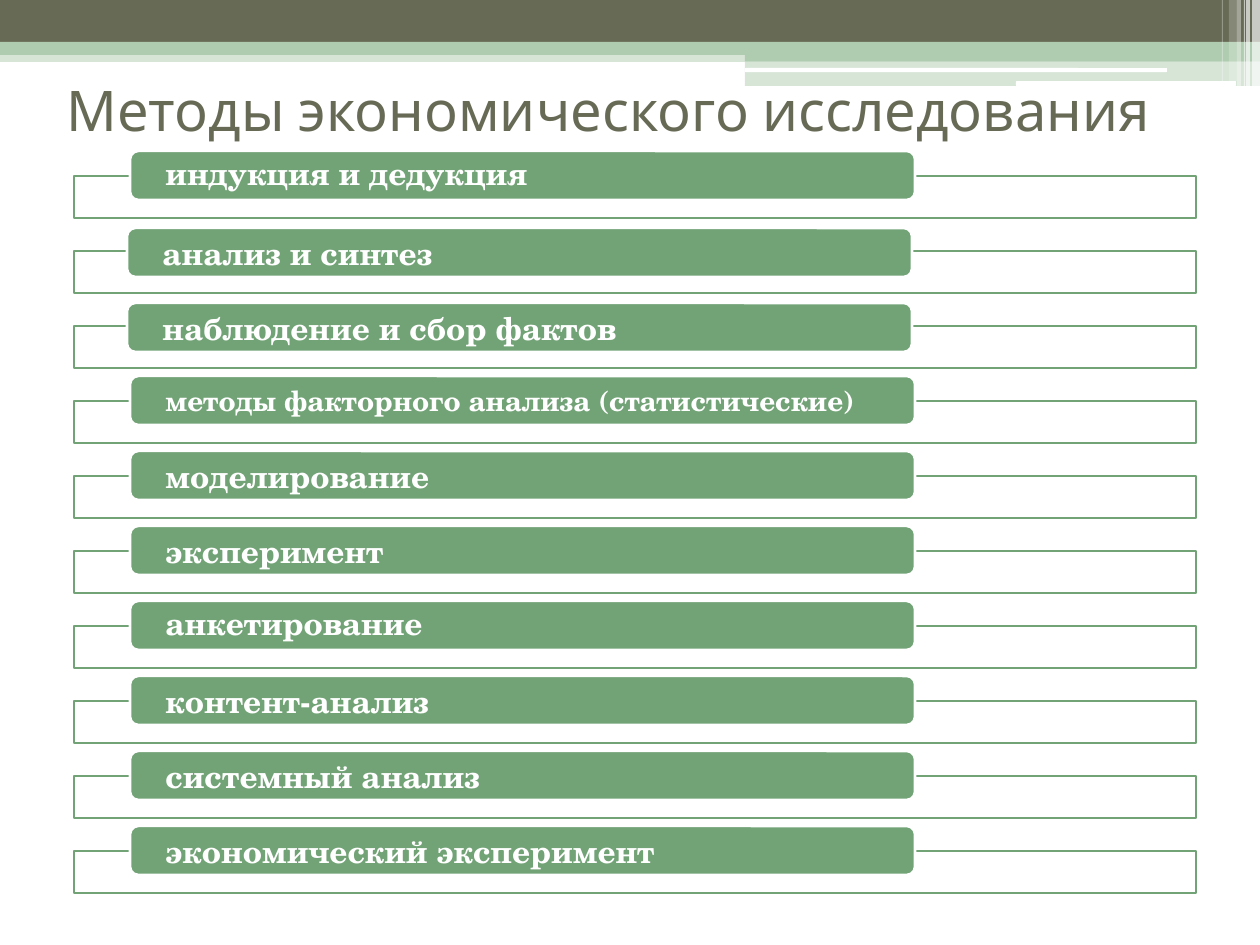
from dataclasses import dataclass
from typing import Optional

from lxml import etree
from pptx import Presentation
from pptx.dml.color import RGBColor
from pptx.enum.shapes import MSO_SHAPE
from pptx.enum.text import MSO_ANCHOR, PP_ALIGN
from pptx.oxml.ns import qn
from pptx.util import Pt

RECTANGLE = MSO_SHAPE.RECTANGLE
ROUNDED = MSO_SHAPE.ROUNDED_RECTANGLE
MIDDLE = MSO_ANCHOR.MIDDLE
LEFT = PP_ALIGN.LEFT

EMU_PER_PX = 914400 / 126
OLIVE, GREEN, MINT, WHITE = "676A55", "72A376", "B0CCB0", "FFFFFF"
TITLE_FONT, METHOD_FONT = "Karla", "TeX Gyre Schola"

FIRST_FRAME_TOP, ROW_PITCH = 176, 75
FRAME_LEFT, FRAME_WIDTH, FRAME_HEIGHT = 74, 1122, 42
BAR_LEFT, BAR_WIDTH, BAR_HEIGHT, BAR_RISE = 130, 785, 49, 25
BAR_INSET = 33


@dataclass(frozen=True)
class Band:
    left: int
    top: int
    width: int
    height: int
    fill: str
    opacity: int = 100
    rounding: Optional[float] = None
    line: Optional[str] = None


@dataclass(frozen=True)
class Method:
    name: str
    size: int = 18
    shift_x: int = 0
    shift_y: int = 0
    line_spacing: float = 1.0


HEADER_BANDS = [
    Band(0, 50, 1260, 12, MINT, 50),
    Band(0, 0, 1260, 42, OLIVE),
    Band(0, 42, 1260, 13, MINT),
    Band(745, 49, 515, 12, MINT),
    Band(745, 61, 515, 25, MINT, 50),
    Band(745, 68, 422, 4, WHITE, rounding=0.17),
    Band(1016, 81, 220, 5, WHITE, rounding=0.17),
    Band(1252, 0, 8, 86, WHITE, 65),
    Band(1246, 0, 4, 86, WHITE, 65),
    Band(1244, 0, 1, 86, WHITE, 60),
    Band(1237, 0, 4, 86, WHITE, 40),
    Band(1229, 0, 8, 81, WHITE, 20),
    Band(1222, 0, 1, 81, WHITE, 30),
]

METHODS = [
    Method("индукция и дедукция", line_spacing=0.9),
    Method("анализ и синтез", shift_x=-3, shift_y=2),
    Method("наблюдение и сбор фактов", shift_x=-3, shift_y=2),
    Method("методы факторного анализа (статистические)", size=16),
    Method("моделирование"),
    Method("эксперимент"),
    Method("анкетирование", line_spacing=0.9),
    Method("контент-анализ"),
    Method("системный анализ"),
    Method("экономический эксперимент"),
]


def px(length: int) -> int:
    return round(length * EMU_PER_PX)


def color(value: str) -> RGBColor:
    return RGBColor.from_string(value)


def draw_band(slide, band: Band):
    kind = RECTANGLE if band.rounding is None else ROUNDED
    shape = slide.shapes.add_shape(
        kind, px(band.left), px(band.top), px(band.width), px(band.height)
    )
    shape.shadow.inherit = False
    if band.rounding is not None:
        shape.adjustments[0] = band.rounding
    shape.fill.solid()
    shape.fill.fore_color.rgb = color(band.fill)
    if band.opacity < 100:
        fill_color = shape.fill._xPr.find(qn("a:solidFill"))[0]
        alpha = etree.SubElement(fill_color, qn("a:alpha"))
        alpha.set("val", str(band.opacity * 1000))
    if band.line is None:
        shape.line.fill.background()
    else:
        shape.line.color.rgb = color(band.line)
        shape.line.width = Pt(1.5)
    return shape


def write_text(shape, text: str, font_name: str, size: int, hex_color: str,
               bold: bool = False, line_spacing: float = 1.0) -> None:
    frame = shape.text_frame
    frame.word_wrap = True
    frame.vertical_anchor = MIDDLE
    paragraph = frame.paragraphs[0]
    paragraph.alignment = LEFT
    paragraph.line_spacing = line_spacing
    run = paragraph.add_run()
    run.text = text
    run.font.name = font_name
    run.font.size = Pt(size)
    run.font.bold = bold
    run.font.color.rgb = color(hex_color)


def draw_method(slide, row: int, method: Method) -> None:
    top = FIRST_FRAME_TOP + row * ROW_PITCH
    draw_band(slide, Band(FRAME_LEFT, top, FRAME_WIDTH, FRAME_HEIGHT,
                          WHITE, 90, line=GREEN))
    bar = draw_band(slide, Band(BAR_LEFT + method.shift_x,
                                top - BAR_RISE + method.shift_y,
                                BAR_WIDTH, BAR_HEIGHT, GREEN,
                                rounding=0.17, line=WHITE))
    frame = bar.text_frame
    frame.margin_left = frame.margin_right = px(BAR_INSET)
    frame.margin_top = frame.margin_bottom = 0
    write_text(bar, method.name, METHOD_FONT, method.size, WHITE,
               bold=True, line_spacing=method.line_spacing)


def main() -> None:
    presentation = Presentation()
    presentation.slide_width = px(1260)
    presentation.slide_height = px(945)
    slide = presentation.slides.add_slide(presentation.slide_layouts[6])
    for band in HEADER_BANDS:
        draw_band(slide, band)
    for row, method in enumerate(METHODS):
        draw_method(slide, row, method)
    title = slide.shapes.add_textbox(px(54), px(66), px(1134), px(86))
    write_text(title, "Методы экономического исследования", TITLE_FONT, 32, OLIVE)
    presentation.save("out.pptx")


if __name__ == "__main__":
    main()
